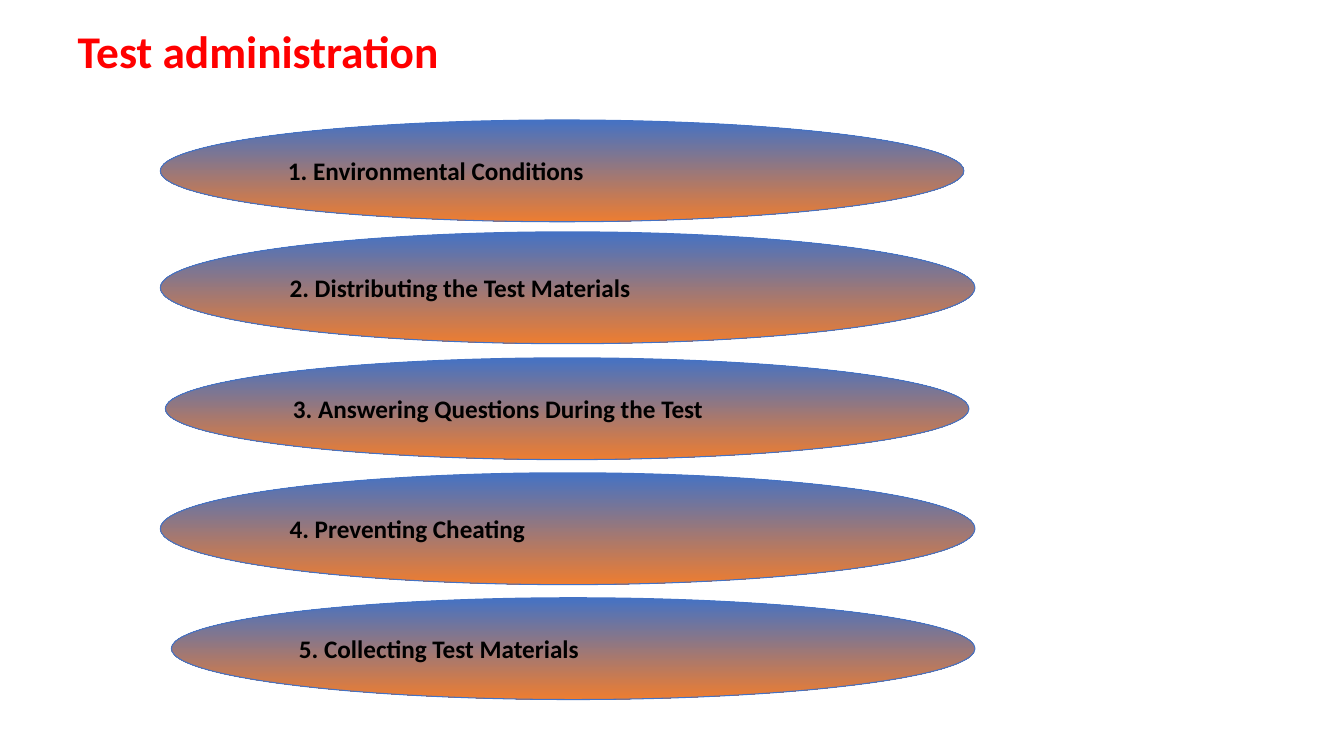
import pptx
import pptx.util
import pptx.dml.color
import pptx.enum.shapes
import pptx.enum.text

Inches = pptx.util.Inches
RGBColor = pptx.dml.color.RGBColor

RED = RGBColor(0xFF, 0x00, 0x00)
BLACK = RGBColor(0x00, 0x00, 0x00)
BLUE = RGBColor(0x44, 0x72, 0xC4)
ORANGE = RGBColor(0xED, 0x7D, 0x31)


def write_text(shape, text, size, color, line_spacing=1.0):
    frame = shape.text_frame
    frame.word_wrap = True
    frame.auto_size = pptx.enum.text.MSO_AUTO_SIZE.NONE
    frame.vertical_anchor = pptx.enum.text.MSO_ANCHOR.MIDDLE
    paragraph = frame.paragraphs[0]
    paragraph.alignment = pptx.enum.text.PP_ALIGN.LEFT
    paragraph.line_spacing = line_spacing
    run = paragraph.add_run()
    run.text = text
    run.font.name = "Calibri"
    run.font.size = pptx.util.Pt(size)
    run.font.bold = True
    run.font.color.rgb = color


presentation = pptx.Presentation()
presentation.slide_width = Inches(13.33)
presentation.slide_height = Inches(7.5)
slide = presentation.slides.add_slide(presentation.slide_layouts[5])

title = slide.shapes.title
title.left, title.top = Inches(0.67), Inches(0.21)
title.width, title.height = Inches(9.09), Inches(0.64)
write_text(title, "Test administration", size=32.4, color=RED, line_spacing=0.9)

steps = [
    ("1. Environmental Conditions", 1.59, 1.19, 7.97, 1.01),
    ("2. Distributing the Test Materials", 1.59, 2.3, 8.08, 1.11),
    ("3. Answering Questions During the Test", 1.64, 3.55, 7.97, 1.01),
    ("4. Preventing Cheating", 1.59, 4.69, 8.08, 1.11),
    ("5. Collecting Test Materials", 1.7, 5.93, 7.97, 1.01),
]

for text, left, top, width, height in steps:
    ellipse = slide.shapes.add_shape(
        pptx.enum.shapes.MSO_SHAPE.OVAL,
        Inches(left), Inches(top), Inches(width), Inches(height),
    )
    ellipse.shadow.inherit = False
    ellipse.fill.gradient()
    ellipse.fill.gradient_angle = 270
    for stop, color, position in zip(ellipse.fill.gradient_stops, (BLUE, ORANGE), (0, 1)):
        stop.color.rgb = color
        stop.position = position
    ellipse.line.color.rgb = BLUE
    ellipse.line.width = pptx.util.Pt(0.75)
    write_text(ellipse, text, size=18, color=BLACK)

presentation.save("out.pptx")
